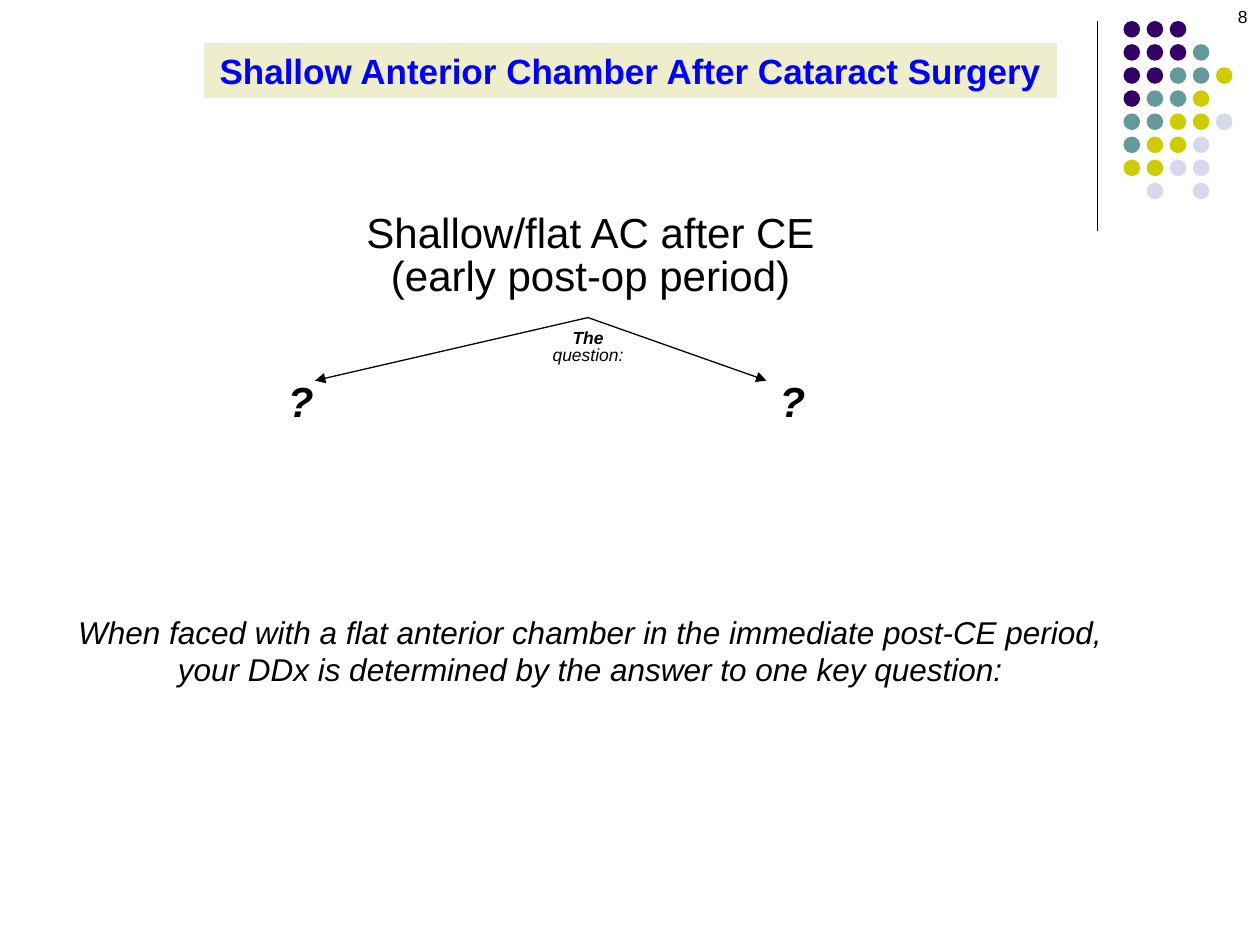
from pptx import Presentation
from pptx.dml.color import RGBColor
from pptx.enum.shapes import MSO_CONNECTOR as Conn, MSO_SHAPE as Shape
from pptx.enum.text import MSO_ANCHOR as Anchor, MSO_AUTO_SIZE as Auto, PP_ALIGN as Align
from pptx.oxml.ns import qn
from pptx.util import Pt
from lxml.etree import SubElement

BLACK = RGBColor(0x00, 0x00, 0x00)
BLUE = RGBColor(0x00, 0x00, 0xFF)
CREAM = RGBColor(0xEE, 0xEE, 0xCC)
PURPLE = RGBColor(0x33, 0x00, 0x66)
TEAL = RGBColor(0x66, 0x99, 0x99)
LIME = RGBColor(0xCC, 0xCC, 0x00)
MIST = RGBColor(0xD8, 0xD8, 0xEC)

deck = Presentation()
deck.slide_width, deck.slide_height = Pt(720), Pt(540)
slide = deck.slides.add_slide(deck.slide_layouts[6])
shapes = slide.shapes


def add_line(x1, y1, x2, y2, arrow=False):
    line = shapes.add_connector(Conn.STRAIGHT, Pt(x1), Pt(y1), Pt(x2), Pt(y2))
    line.line.color.rgb = BLACK
    line.line.width = Pt(0.75)
    if arrow:
        SubElement(line.line._get_or_add_ln(), qn("a:tailEnd"), type="triangle")
    SubElement(line._element.spPr, qn("a:effectLst"))


def add_text(box, rows, size, color=BLACK, bold=False, slant=False,
             align=Align.CENTER, space=1.0, wrap=False, grow=True, fill=None):
    area = [Pt(v) for v in box]
    if fill is None:
        text = shapes.add_textbox(*area)
    else:
        text = shapes.add_shape(Shape.RECTANGLE, *area)
        text.shadow.inherit = False
        text.fill.solid()
        text.fill.fore_color.rgb = fill
        text.line.fill.background()
    frame = text.text_frame
    frame.word_wrap = wrap
    frame.auto_size = Auto.SHAPE_TO_FIT_TEXT if grow else Auto.NONE
    frame.vertical_anchor = Anchor.TOP
    for i, row in enumerate(rows):
        para = frame.paragraphs[0] if i == 0 else frame.add_paragraph()
        para.alignment = align
        para.line_spacing = space
        run = para.add_run()
        run.text = row
        run.font.name = "Arial"
        run.font.size = Pt(size)
        run.font.bold = bold
        run.font.italic = slant
        run.font.color.rgb = color
    return frame


add_line(627, 12, 627, 132)

tints = {"P": PURPLE, "T": TEAL, "L": LIME, "M": MIST}
grid = ["PPP", "PPPT", "PPTTL", "PTTL", "TTLLM", "TLLM", "LLMM", ".M.M"]
dots = shapes.add_group_shape()
for r, row in enumerate(grid):
    for c, key in enumerate(row):
        if key in tints:
            dot = dots.shapes.add_shape(Shape.OVAL, Pt(642 + 13.2 * c), Pt(12 + 13.2 * r),
                                        Pt(9.5), Pt(9.5))
            dot.shadow.inherit = False
            dot.fill.solid()
            dot.fill.fore_color.rgb = tints[key]
            dot.line.fill.background()

for x in (180, 438):
    add_line(336, 181.5, x, 217.5, arrow=True)

add_text((201.5, 119, 272, 56), ["Shallow/flat AC after CE", "(early post-op period)"],
         24, space=0.85)
add_text((552, 0, 168, 36), ["8"], 10, align=Align.RIGHT, wrap=True, grow=False)
for x in (438, 157):
    add_text((x, 215.5, 29.5, 31.5), ["?"], 24, bold=True, slant=True, space=0.85)
add_text((116.5, 24.5, 487.5, 31.5), ["Shallow Anterior Chamber After Cataract Surgery"],
         20, color=BLUE, bold=True, fill=CREAM)

ask = add_text((312, 184, 48, 30), ["The", "question:"], 10, slant=True, space=0.8, grow=False)
ask.vertical_anchor = Anchor.MIDDLE
ask.paragraphs[0].runs[0].font.bold = True

add_text((29.5, 346.5, 615.5, 51),
         ["When faced with a flat anterior chamber in the immediate post-CE period, "
          "your DDx is determined by the answer to one key question:"],
         18, slant=True, wrap=True)

deck.save("out.pptx")
